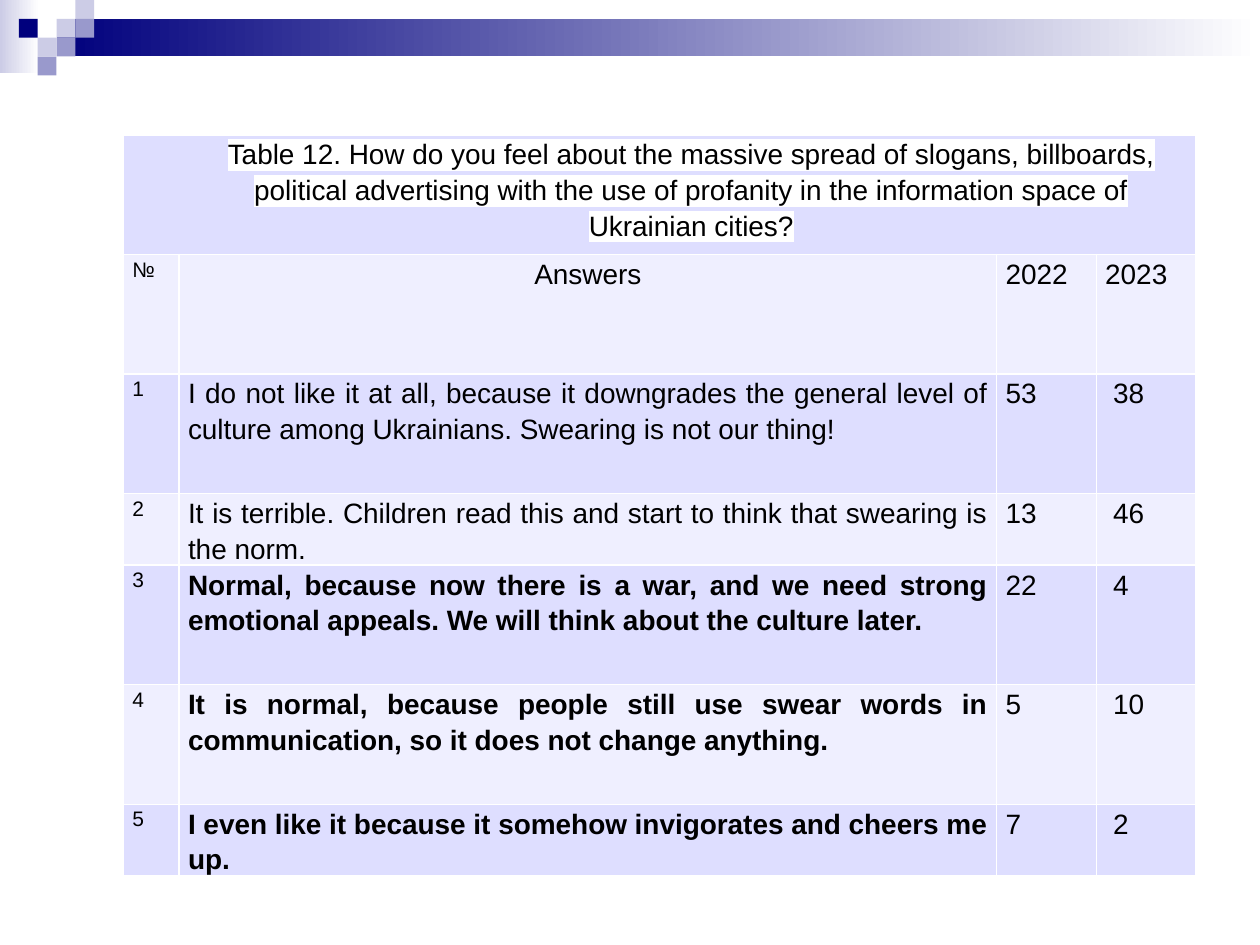
from dataclasses import dataclass

from lxml.etree import SubElement
from pptx import Presentation
from pptx.dml.color import RGBColor as Rgb
from pptx.enum.shapes import MSO_SHAPE as Shape
from pptx.enum.text import PP_ALIGN as Align
from pptx.oxml import parse_xml
from pptx.oxml.ns import nsdecls, qn
from pptx.util import Cm, Pt


@dataclass(frozen=True)
class Theme:
    """Colours, font and type sizes of the slide."""
    navy: str = "00007D"
    violet: str = "9999CC"
    lavender: str = "CCCCE6"
    dark_row: str = "DEDEFF"
    light_row: str = "EFEFFF"
    white: str = "FFFFFF"
    black: str = "000000"
    font: str = "Arial"
    body: int = 16
    small: int = 12


THEME = Theme()
SQUARE = 0.38
SQUARES = [
    (3, 1, THEME.lavender), (4, 0, THEME.lavender), (4, 1, THEME.violet),
    (2, 2, THEME.lavender), (1, 1, THEME.navy), (3, 2, THEME.violet),
    (2, 3, THEME.violet),
]
COLUMN_WIDTHS = [1.12, 16.48, 2.01, 2.01]
TALL, SHORT = 2.41, 1.17
ROW_HEIGHTS = [TALL, TALL, TALL, SHORT, TALL, TALL, SHORT]
QUESTION = (
    "Table 12. How do you feel about the massive spread of slogans, billboards, "
    "political advertising with the use of profanity in the information space of "
    "Ukrainian cities?"
)
HEADINGS = ["№", "Answers", "2022", "2023"]
ANSWERS = [
    ("I do not like it at all, because it downgrades the general level of culture "
     "among Ukrainians. Swearing is not our thing!", 53, 38, False),
    ("It is terrible. Children read this and start to think that swearing is the "
     "norm.", 13, 46, False),
    ("Normal, because now there is a war, and we need strong emotional appeals. "
     "We will think about the culture later.", 22, 4, True),
    ("It is normal, because people still use swear words in communication, so it "
     "does not change anything.", 5, 10, True),
    ("I even like it because it somehow invigorates and cheers me up.", 7, 2, True),
]


def add_rectangle(slide, left, top, width, height, color, fade=False):
    """Add a plain rectangle, optionally fading to white on the right."""
    shape = slide.shapes.add_shape(
        Shape.RECTANGLE, Cm(left), Cm(top), Cm(width), Cm(height))
    shape.shadow.inherit = False
    shape.line.fill.background()
    if fade:
        shape.fill.gradient()
        shape.fill.gradient_angle = 0
        for stop, stop_color in zip(shape.fill.gradient_stops, (color, THEME.white)):
            stop.color.rgb = Rgb.from_string(stop_color)
    else:
        shape.fill.solid()
        shape.fill.fore_color.rgb = Rgb.from_string(color)


def add_decoration(slide):
    """Draw the fading bands and the small squares at the top."""
    add_rectangle(slide, 0, 0, 0.79, 1.47, THEME.lavender, fade=True)
    add_rectangle(slide, 1.14, SQUARE, 24.26, 2 * SQUARE, THEME.navy, fade=True)
    for column, row, color in SQUARES:
        add_rectangle(slide, column * SQUARE, row * SQUARE, SQUARE, SQUARE, color)


def write_text(cell, text, *, size=THEME.body, bold=False, align=Align.JUSTIFY,
               indent=0, space_after=0, highlight=None):
    """Write one formatted paragraph into a cell."""
    paragraph = cell.text_frame.paragraphs[0]
    paragraph.alignment = align
    paragraph.line_spacing = 1.15
    paragraph.space_after = Pt(space_after)
    if indent:
        paragraph._p.get_or_add_pPr().set("marL", str(Cm(indent)))
    run = paragraph.add_run()
    run.text = text
    font = run.font
    font.name, font.size, font.bold = THEME.font, Pt(size), bold
    font.color.rgb = Rgb.from_string(THEME.black)
    if highlight:
        run._r.rPr.find(qn("a:latin")).addprevious(parse_xml(
            f'<a:highlight {nsdecls("a")}><a:srgbClr val="{highlight}"/></a:highlight>'))


def style_cell(cell, color):
    """Set the margins, white borders and fill of a cell."""
    cell.margin_left = cell.margin_right = Cm(0.18)
    cell.margin_top = cell.margin_bottom = 0
    properties = cell._tc.get_or_add_tcPr()
    for side in ("lnL", "lnR", "lnT", "lnB"):
        line = SubElement(properties, qn(f"a:{side}"), w=str(Pt(1)))
        fill = SubElement(line, qn("a:solidFill"))
        SubElement(fill, qn("a:srgbClr"), val=THEME.white)
    cell.fill.solid()
    cell.fill.fore_color.rgb = Rgb.from_string(color)


def add_survey_table(slide):
    """Add the survey table with its question, headings and answers."""
    table = slide.shapes.add_table(
        len(ROW_HEIGHTS), len(COLUMN_WIDTHS), Cm(2.49), Cm(2.72),
        Cm(sum(COLUMN_WIDTHS)), Cm(sum(ROW_HEIGHTS))).table
    for column, width in zip(table.columns, COLUMN_WIDTHS):
        column.width = Cm(width)
    for index, (row, height) in enumerate(zip(table.rows, ROW_HEIGHTS)):
        row.height = Cm(height)
        for cell in row.cells:
            style_cell(cell, THEME.light_row if index % 2 else THEME.dark_row)

    table.cell(0, 0).merge(table.cell(0, len(COLUMN_WIDTHS) - 1))
    write_text(table.cell(0, 0), QUESTION, align=Align.CENTER, indent=1.27,
               space_after=10, highlight=THEME.white)
    for column, heading in enumerate(HEADINGS):
        write_text(table.cell(1, column), heading,
                   size=THEME.body if column else THEME.small,
                   align=Align.CENTER if column == 1 else Align.JUSTIFY)
    for number, (answer, before, after, bold) in enumerate(ANSWERS, start=1):
        cells = table.rows[number + 1].cells
        write_text(cells[0], str(number), size=THEME.small)
        write_text(cells[1], answer, bold=bold)
        write_text(cells[2], str(before))
        write_text(cells[3], str(after), indent=0.16)


def main():
    """Build the survey slide and save it."""
    presentation = Presentation()
    presentation.slide_width, presentation.slide_height = Cm(25.4), Cm(19.05)
    slide = presentation.slides.add_slide(presentation.slide_layouts[6])
    add_decoration(slide)
    add_survey_table(slide)
    presentation.save("out.pptx")


if __name__ == "__main__":
    main()
